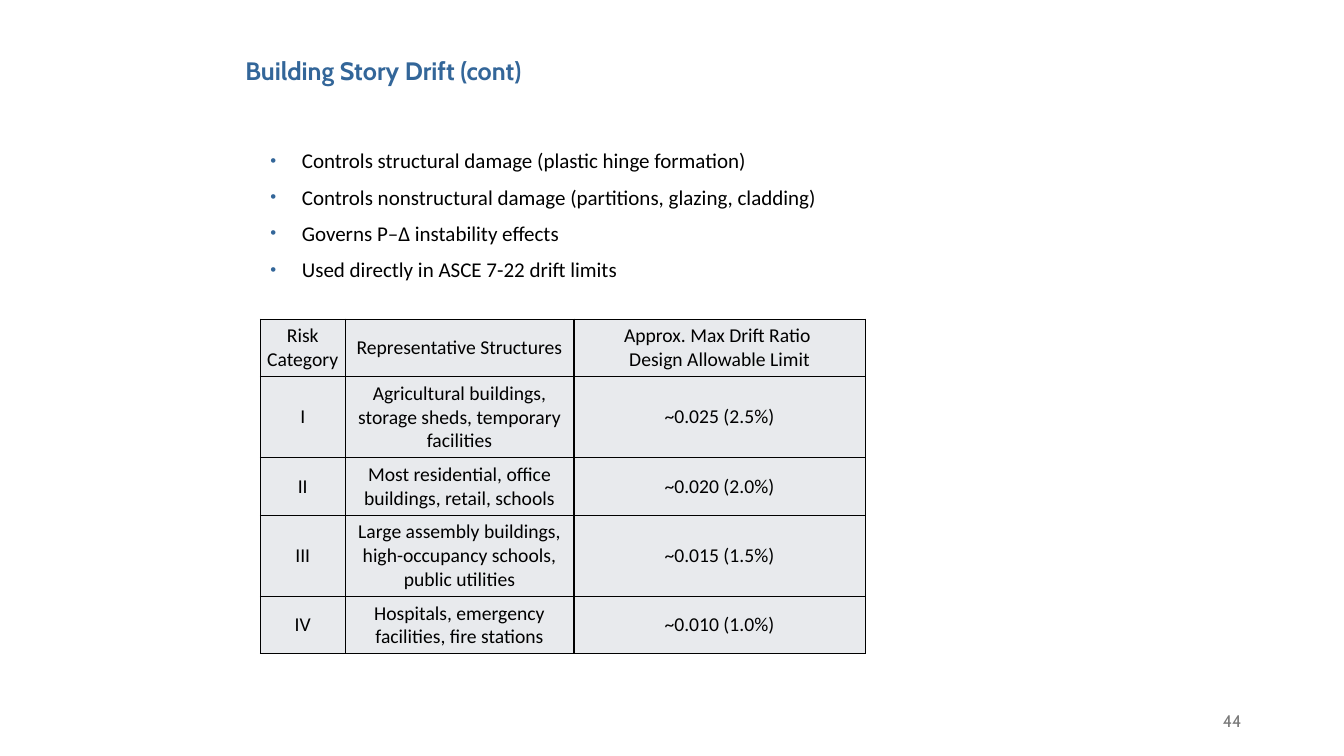
from copy import deepcopy
from dataclasses import dataclass

from pptx import Presentation
from pptx.dml.color import RGBColor
from pptx.enum.text import MSO_ANCHOR as Anchor, PP_ALIGN as Align
from pptx.oxml import parse_xml
from pptx.oxml.ns import nsdecls, qn
from pptx.util import Pt


@dataclass(frozen=True)
class Theme:
    blue: str = "336699"
    black: str = "000000"
    gray: str = "797979"
    cell: str = "E8EAED"
    heading_font: str = "Cabin"
    body_font: str = "Calibri"
    title_size: int = 18
    bullet_size: int = 15
    table_size: int = 14
    number_size: int = 12


theme = Theme()


def write(para, text, size, font=theme.body_font, color=theme.black, bold=False, align=Align.LEFT):
    para.text = text
    para.alignment = align
    for span in para.runs:
        span.font.size = Pt(size)
        span.font.name = font
        span.font.bold = bold
        span.font.color.rgb = RGBColor.from_string(color)
    for line_break in para._p.findall(qn("a:br")):
        line_break.append(deepcopy(para.runs[0]._r.rPr))


def add_xml(parent, tag, attributes, content=""):
    parent.append(parse_xml(f"<a:{tag} {nsdecls('a')} {attributes}>{content}</a:{tag}>"))


deck = Presentation()
deck.slide_width, deck.slide_height = Pt(960), Pt(540)
page = deck.slides.add_slide(deck.slide_layouts[5])

title = page.shapes.title
title.left, title.top, title.width, title.height = Pt(168), Pt(36), Pt(606), Pt(51)
title.text_frame.vertical_anchor = Anchor.TOP
write(title.text_frame.paragraphs[0], "Building Story Drift (cont)", theme.title_size,
      font=theme.heading_font, color=theme.blue, bold=True)

bullets = [
    "Controls structural damage (plastic hinge formation)",
    "Controls nonstructural damage (partitions, glazing, cladding)",
    "Governs P–Δ instability effects",
    "Used directly in ASCE 7-22 drift limits",
]
box = page.shapes.add_textbox(Pt(186), Pt(102), Pt(492), Pt(123))
box.text_frame.word_wrap = True
for index, text in enumerate(bullets):
    para = box.text_frame.add_paragraph() if index else box.text_frame.paragraphs[0]
    properties = para._p.get_or_add_pPr()
    properties.set("marL", str(Pt(22.5)))
    properties.set("indent", str(-Pt(22.5)))
    add_xml(properties, "buClr", "", f'<a:srgbClr val="{theme.blue}"/>')
    add_xml(properties, "buSzPct", 'val="80000"')
    add_xml(properties, "buFont", 'typeface="Arial"')
    add_xml(properties, "buChar", 'char="•"')
    write(para, text, theme.bullet_size)
    para.space_before = Pt(4 if index else 0)
    para.space_after = Pt(4)

drift_limits = [
    ("Risk Category", "Representative Structures", "Approx. Max Drift Ratio \vDesign Allowable Limit"),
    ("I", "Agricultural buildings, storage sheds, temporary facilities", "~0.025 (2.5%)"),
    ("II", "Most residential, office buildings, retail, schools", "~0.020 (2.0%)"),
    ("III", "Large assembly buildings, high-occupancy schools, public utilities", "~0.015 (1.5%)"),
    ("IV", "Hospitals, emergency facilities, fire stations", "~0.010 (1.0%)"),
]
column_widths = [60.5, 163.5, 208]
row_lines = [2, 3, 2, 3, 2]
row_heights = [17 * lines + 7 for lines in row_lines]
table = page.shapes.add_table(len(drift_limits), len(column_widths), Pt(186), Pt(228),
                              Pt(sum(column_widths)), Pt(sum(row_heights))).table
table.first_row = table.horz_banding = False
for column, width in zip(table.columns, column_widths):
    column.width = Pt(width)
for row, height, texts in zip(table.rows, row_heights, drift_limits):
    row.height = Pt(height)
    for cell, text in zip(row.cells, texts):
        cell.margin_left = cell.margin_right = cell.margin_top = cell.margin_bottom = Pt(3.6)
        cell.vertical_anchor = Anchor.MIDDLE
        for side in ("lnL", "lnR", "lnT", "lnB"):
            add_xml(cell._tc.get_or_add_tcPr(), side, f'w="{Pt(1)}"',
                    f'<a:solidFill><a:srgbClr val="{theme.black}"/></a:solidFill>')
        cell.fill.solid()
        cell.fill.fore_color.rgb = RGBColor.from_string(theme.cell)
        write(cell.text_frame.paragraphs[0], text, theme.table_size, align=Align.CENTER)

number = page.shapes.add_textbox(Pt(678), Pt(500.5), Pt(216), Pt(28.5))
number.text_frame.word_wrap = True
number.text_frame.vertical_anchor = Anchor.MIDDLE
write(number.text_frame.paragraphs[0], "44", theme.number_size,
      font=theme.heading_font, color=theme.gray, align=Align.RIGHT)

deck.save("out.pptx")
